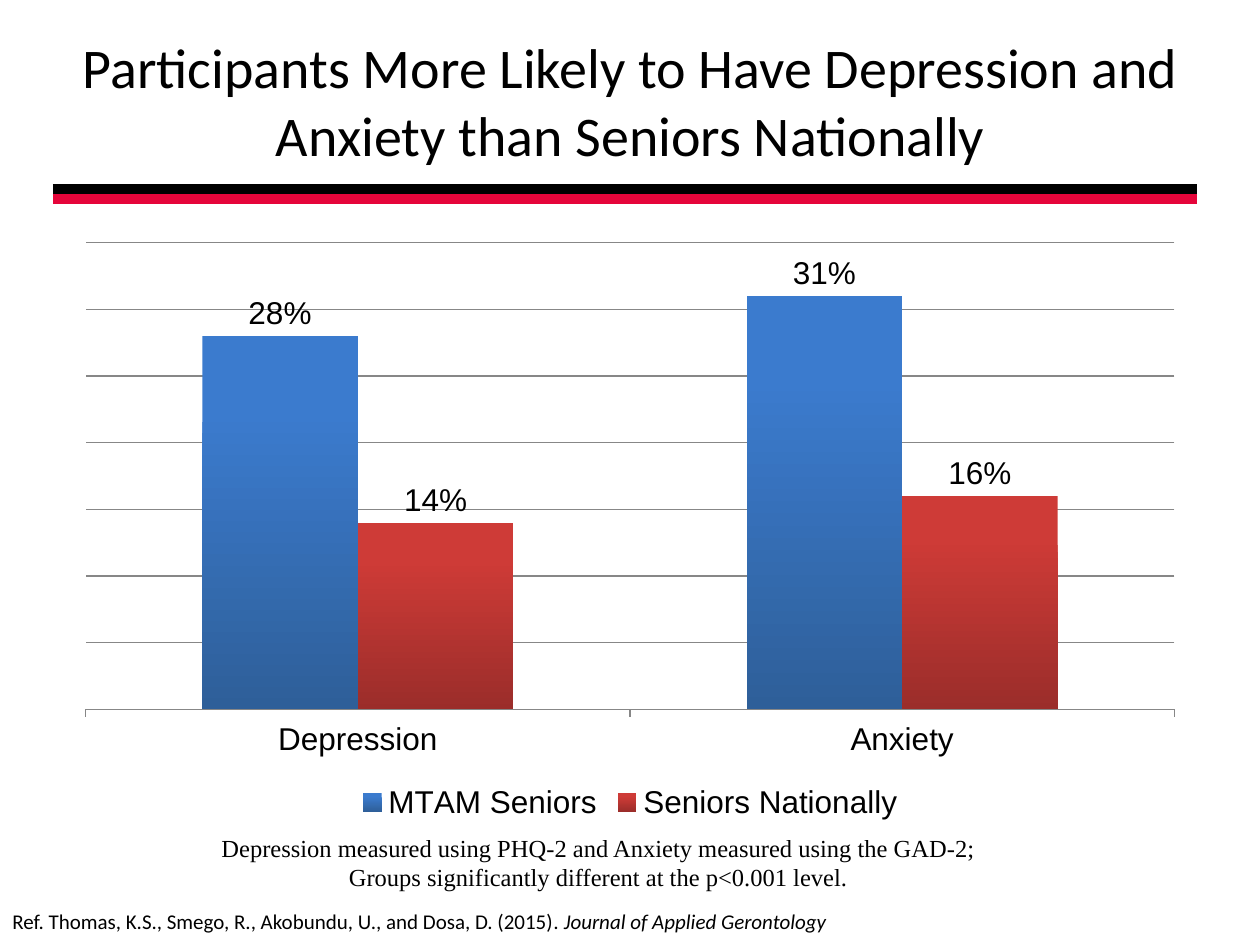
from pptx import Presentation
from pptx.chart.data import CategoryChartData as ChartData
from pptx.dml.color import RGBColor
from pptx.enum.chart import XL_CHART_TYPE as Kind, XL_LABEL_POSITION as Spot
from pptx.enum.chart import XL_LEGEND_POSITION as Side, XL_TICK_MARK as Tick
from pptx.enum.text import MSO_ANCHOR as Anchor, PP_ALIGN as Align
from pptx.oxml.ns import qn
from pptx.util import Inches, Pt
from lxml import etree

BLACK = "000000"
GREY = "878787"


def color(code):
    return RGBColor.from_string(code)


def style(font, size, name="Arial"):
    font.size = Pt(size)
    font.name = name
    font.color.rgb = color(BLACK)


def write(frame, *lines, size, font="Calibri", align=Align.LEFT, anchor=Anchor.TOP):
    """Fill a frame; each line is a list of (text, italic) runs."""
    frame.word_wrap = True
    frame.vertical_anchor = anchor
    for i, line in enumerate(lines):
        para = frame.add_paragraph() if i else frame.paragraphs[0]
        para.alignment = align
        for text, italic in line:
            run = para.add_run()
            run.text = text
            style(run.font, size, font)
            run.font.italic = italic


def add_note(slide, box, *lines, **form):
    note = slide.shapes.add_textbox(*map(Inches, box))
    write(note.text_frame, *lines, **form)


def add_title(slide, box, text):
    title = slide.shapes.title
    title.left, title.top, title.width, title.height = map(Inches, box)
    write(title.text_frame, [(text, False)], size=32,
          align=Align.CENTER, anchor=Anchor.MIDDLE)


def add_rules(slide, left, top, width):
    # Two touching bands under the title
    for i, code in enumerate((BLACK, "E5053A")):
        y = Inches(top + i * 0.08)
        rule = slide.shapes.add_connector(1, Inches(left), y, Inches(left + width), y)
        rule.line.color.rgb = color(code)
        rule.line.width = Pt(6)
        etree.SubElement(rule.element.spPr, qn("a:effectLst"))


def shade(fill, light, dark):
    fill.gradient()
    fill.gradient_angle = 270
    for stop, code, place in zip(fill.gradient_stops, (light, dark), (0.2, 1)):
        stop.color.rgb = color(code)
        stop.position = place


def add_bars(slide, box):
    data = ChartData(number_format="0%")
    data.categories = ["Depression", "Anxiety"]
    data.add_series("MTAM Seniors", (0.28, 0.31))
    data.add_series("Seniors Nationally", (0.14, 0.16))
    chart = slide.shapes.add_chart(Kind.COLUMN_CLUSTERED, *map(Inches, box), data).chart
    chart.has_title = False
    style(chart.font, 18)

    # Axes and grid
    scale = chart.value_axis
    scale.minimum_scale, scale.maximum_scale, scale.major_unit = 0, 0.35, 0.05
    scale.visible = False
    scale.has_major_gridlines = True
    scale.tick_labels.number_format = "0.0%"
    scale.tick_labels.number_format_is_linked = False
    chart.category_axis.major_tick_mark = Tick.OUTSIDE
    for part in (scale.major_gridlines, chart.category_axis):
        part.format.line.color.rgb = color(GREY)
        part.format.line.width = Pt(0.75)

    # Bars and their labels
    plot = chart.plots[0]
    plot.gap_width = 150
    plot.overlap = 0
    plot.vary_by_categories = False
    tones = (("3B7BCE", "2E5F99"), ("CE3B37", "9B2D2A"))
    for series, pair in zip(plot.series, tones):
        series.invert_if_negative = False
        shade(series.format.fill, *pair)
        labels = series.data_labels
        labels.show_value = True
        labels.number_format = "0%"
        labels.number_format_is_linked = False
        labels.position = Spot.OUTSIDE_END
        style(labels.font, 18)

    chart.has_legend = True
    chart.legend.position = Side.BOTTOM
    chart.legend.include_in_layout = False
    style(chart.legend.font, 18)


def main():
    deck = Presentation()
    deck.slide_width, deck.slide_height = Inches(10), Inches(7.5)
    slide = deck.slides.add_slide(deck.slide_layouts[5])
    add_rules(slide, 0.42, 1.5, 9.08)
    add_title(slide, (-0.08, 0.17, 10.17, 1.25),
              "Participants More Likely to Have Depression and Anxiety than Seniors Nationally")
    add_bars(slide, (0.5, 1.83, 9, 4.73))
    # Method and reference
    add_note(slide, (-0.25, 6.56, 10, 0.57),
             [("Depression measured using PHQ-2 and Anxiety measured using the GAD-2;", False)],
             [("Groups significantly different at the p<0.001 level.", False)],
             size=14, font="Times New Roman", align=Align.CENTER)
    add_note(slide, (0, 7.16, 8.6, 0.3),
             [("Ref. Thomas, K.S., Smego, R., Akobundu, U., and Dosa, D. (2015)", False),
              (". Journal of Applied Gerontology", True)], size=12)
    deck.save("out.pptx")


if __name__ == "__main__":
    main()
